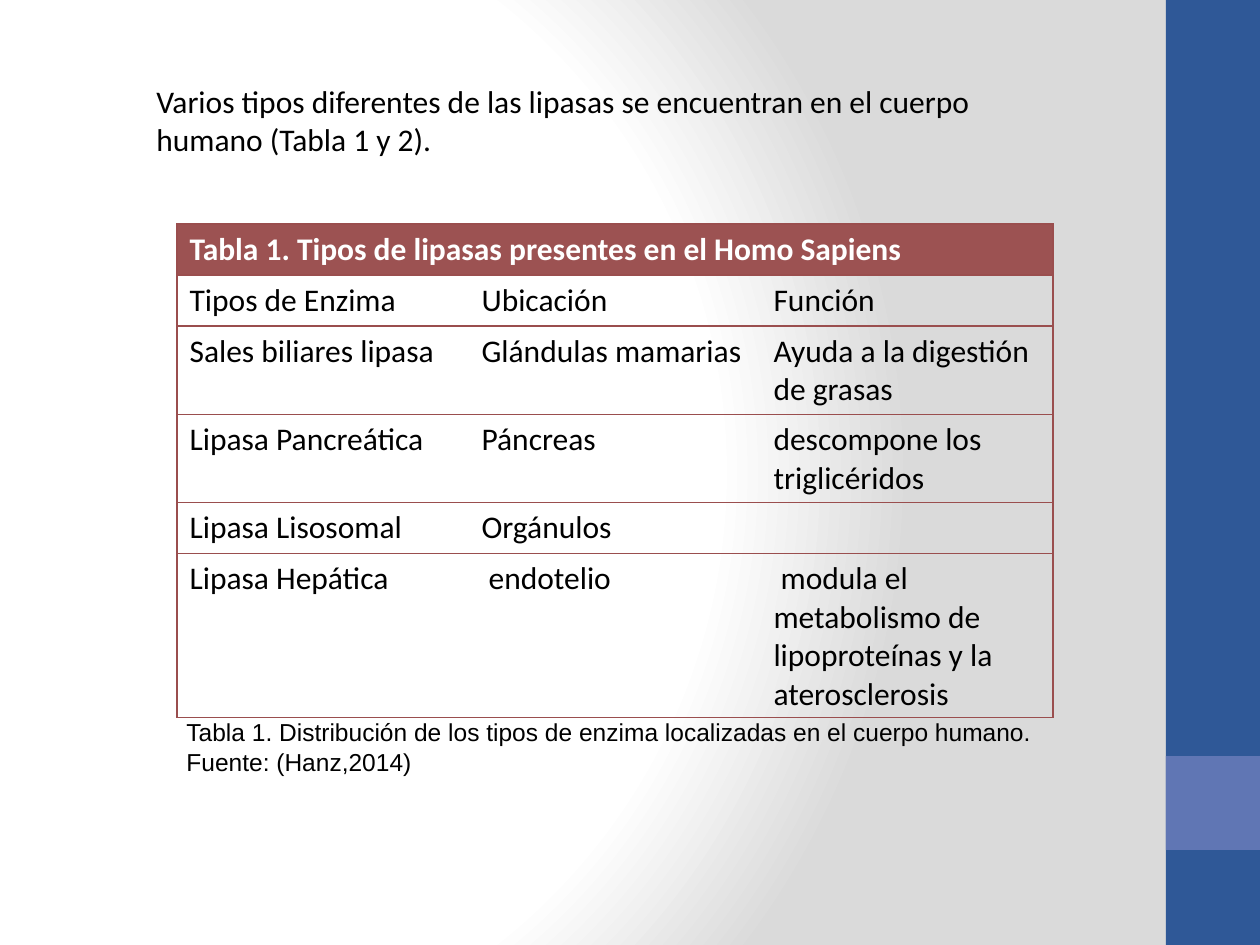
from lxml import etree
from pptx import Presentation
from pptx.dml.color import RGBColor
from pptx.enum.shapes import MSO_SHAPE
from pptx.enum.text import MSO_AUTO_SIZE
from pptx.util import Pt

RECT = MSO_SHAPE.RECTANGLE
GROW = MSO_AUTO_SIZE.SHAPE_TO_FIT_TEXT
NS = "http://schemas.openxmlformats.org/drawingml/2006/main"
NSP = "http://schemas.openxmlformats.org/presentationml/2006/main"
COLORS = {"band": "2F5897", "block": "6076B4", "head": "9C5252",
          "rule": "9A4E4E", "ink": "000000", "white": "FFFFFF",
          "gray": "DADADA"}

TITLE = "Tabla 1. Tipos de lipasas presentes en el Homo Sapiens"
ROWS = [
    ("Tipos de Enzima", "Ubicación", "Función"),
    ("Sales biliares lipasa", "Glándulas mamarias",
     "Ayuda a la digestión de grasas"),
    ("Lipasa Pancreática", "Páncreas", "descompone los triglicéridos"),
    ("Lipasa Lisosomal", "Orgánulos", ""),
    ("Lipasa Hepática", " endotelio",
     " modula el metabolismo de lipoproteínas y la aterosclerosis"),
]
HEIGHTS = [51, 51, 88, 88, 51, 164]


def px(n):
    return round(n * 914400 / 126)


def rgb(name):
    return RGBColor.from_string(COLORS[name])


def write(frame, text, size=18, font="Calibri", color="ink", bold=False):
    run = frame.paragraphs[0].add_run()
    run.text = text
    run.font.size = Pt(size)
    run.font.name = font
    run.font.bold = bold
    run.font.color.rgb = rgb(color)


def add_text(slide, box, text, **style):
    frame = slide.shapes.add_textbox(*map(px, box)).text_frame
    frame.word_wrap = True
    frame.auto_size = GROW
    write(frame, text, **style)


def add_back(slide):
    stops = "".join(
        f'<a:gs pos="{pos}"><a:srgbClr val="{COLORS[name]}"/></a:gs>'
        for pos, name in ((0, "white"), (75000, "white"), (100000, "gray")))
    back = etree.fromstring(
        f'<p:bg xmlns:p="{NSP}" xmlns:a="{NS}"><p:bgPr>'
        f'<a:gradFill rotWithShape="1"><a:gsLst>{stops}</a:gsLst>'
        '<a:path path="circle">'
        '<a:fillToRect l="20000" t="50000" r="100000" b="50000"/>'
        '</a:path></a:gradFill><a:effectLst/></p:bgPr></p:bg>')
    slide.element.cSld.insert(0, back)


def add_band(slide, box):
    left, top, width, height = box
    parts = (("band", top, height), ("block", top + height * 4 // 5, width))
    for name, y, tall in parts:
        shape = slide.shapes.add_shape(
            RECT, px(left), px(y), px(width), px(tall))
        shape.shadow.inherit = False
        shape.fill.solid()
        shape.fill.fore_color.rgb = rgb(name)
        shape.line.fill.background()


def set_edges(cell, sides):
    """Rule the sides named in a string of L, R, T and B; clear the rest."""
    props = cell._tc.get_or_add_tcPr()
    for i, side in enumerate("LRTB"):
        fill = "<a:noFill/>"
        if side in sides:
            fill = (f'<a:solidFill><a:srgbClr val="{COLORS["rule"]}"/>'
                    '</a:solidFill>')
        props.insert(i, etree.fromstring(
            f'<a:ln{side} xmlns:a="{NS}" w="12700">{fill}</a:ln{side}>'))


def add_grid(slide, box):
    left, top, width = box
    cols = len(ROWS[0])
    table = slide.shapes.add_table(
        len(HEIGHTS), cols, px(left), px(top), px(width),
        px(sum(HEIGHTS))).table
    for col in table.columns:
        col.width = px(width) // cols
    for row, tall in zip(table.rows, HEIGHTS):
        row.height = px(tall)

    # Title row across all columns
    head = table.cell(0, 0)
    head.merge(table.cell(0, cols - 1))
    head.fill.solid()
    head.fill.fore_color.rgb = rgb("head")
    set_edges(head, "LRTB")
    write(head.text_frame, TITLE, color="white", bold=True)

    # Body rows: horizontal rules and an outer frame
    for r, texts in enumerate(ROWS, 1):
        for c, text in enumerate(texts):
            cell = table.cell(r, c)
            cell.fill.background()
            sides = "TB" + "L" * (c == 0) + "R" * (c == cols - 1)
            set_edges(cell, sides)
            if text:
                write(cell.text_frame, text)


def main():
    deck = Presentation()
    deck.slide_width, deck.slide_height = px(1260), px(945)
    slide = deck.slides.add_slide(deck.slide_layouts[6])

    add_back(slide)
    add_band(slide, (1166, 0, 94, 945))
    add_text(slide, (144, 76, 942, 89),
             "Varios tipos diferentes de las lipasas se encuentran "
             "en el cuerpo humano (Tabla 1 y 2).")
    add_grid(slide, (177, 224, 876))
    add_text(slide, (174, 711, 873, 72),
             "Tabla 1. Distribución de los tipos de enzima localizadas "
             "en el cuerpo humano. Fuente: (Hanz,2014)",
             size=14, font="Arial")
    deck.save("out.pptx")


if __name__ == "__main__":
    main()
